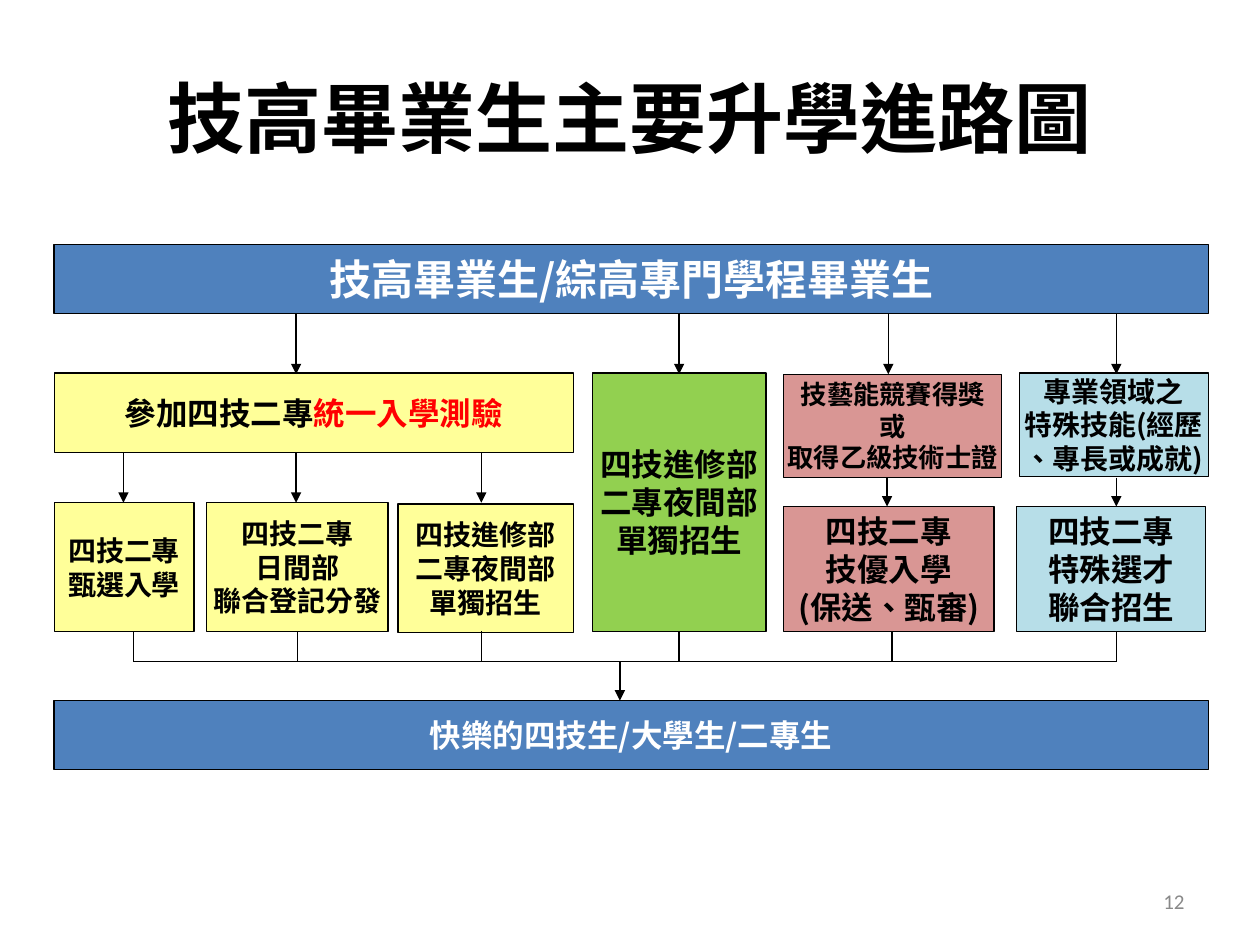
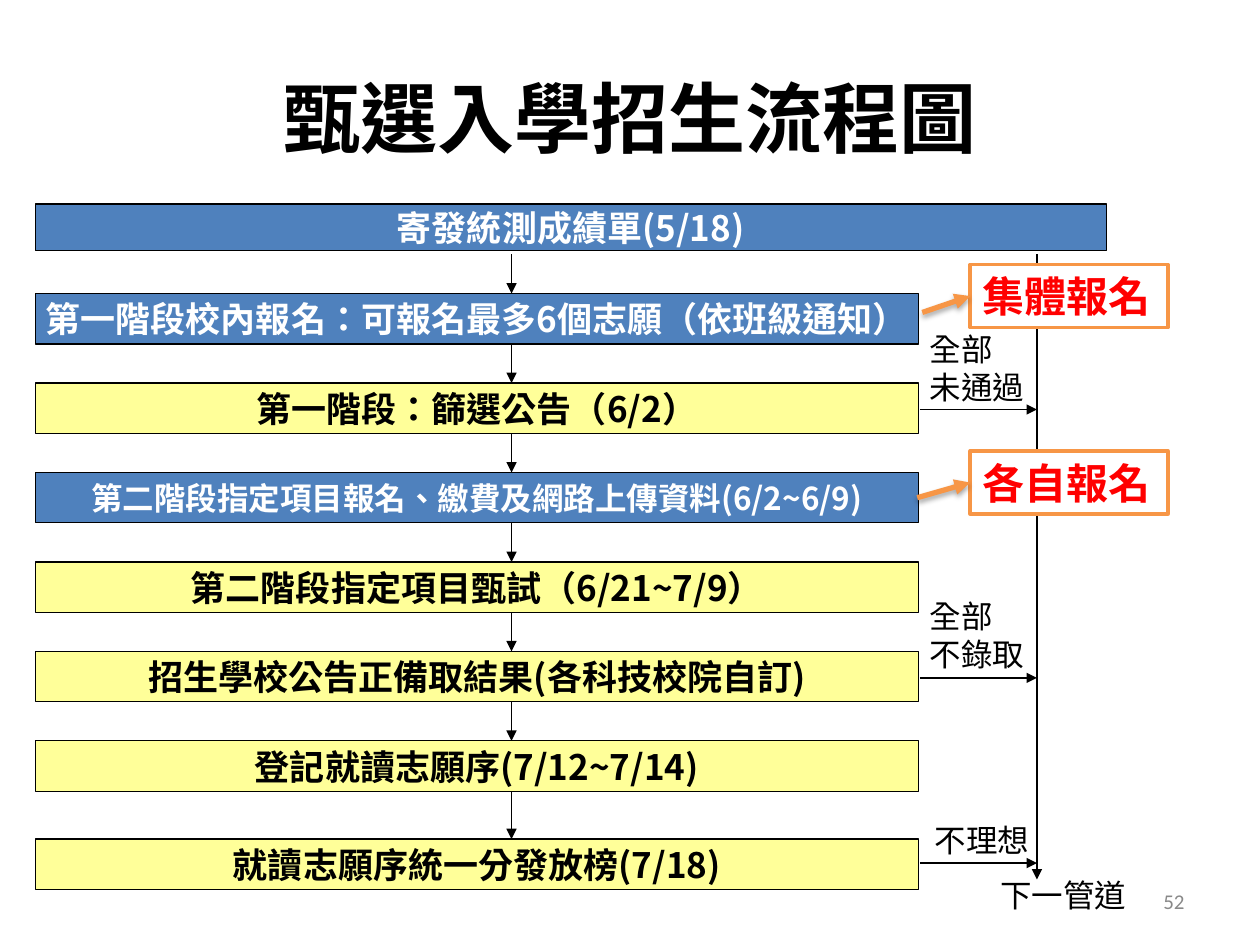
from dataclasses import dataclass, replace

import lxml.etree
import pptx
import pptx.dml.color
import pptx.enum.shapes
import pptx.enum.text
import pptx.oxml
import pptx.oxml.ns
import pptx.util

Inches = pptx.util.Inches
ALIGN = pptx.enum.text.PP_ALIGN
ANCHOR = pptx.enum.text.MSO_ANCHOR
qn = pptx.oxml.ns.qn


@dataclass(frozen=True)
class Theme:
    blue: str = "4F81BD"
    yellow: str = "FFFF99"
    green: str = "92D050"
    rose: str = "D99694"
    aqua: str = "B7DEE8"
    orange: str = "F79646"
    red: str = "FF0000"
    black: str = "000000"
    white: str = "FFFFFF"
    gray: str = "898989"
    cjk: str = "Noto Sans CJK SC"
    mono: str = "Noto Sans Mono"
    arial: str = "Arial"
    calibri: str = "Calibri"
    title: int = 44
    banner: int = 24
    step: int = 20
    body: int = 18
    small: int = 16
    tiny: int = 15
    number: int = 12
    hairline: float = 0.75
    frame: float = 2
    pointer: float = 3


THEME = Theme()


@dataclass(frozen=True)
class Box:
    left: float
    top: float
    width: float
    height: float

    def inner(self, left, top, width, height):
        return Box(self.left + left, self.top + top, width, height)

    def lengths(self):
        return [Inches(side) for side in (self.left, self.top, self.width, self.height)]


@dataclass(frozen=True)
class Style:
    size: int
    color: str = THEME.black
    font: str = THEME.cjk
    bold: bool = True
    align: ALIGN = ALIGN.CENTER
    anchor: ANCHOR = ANCHOR.MIDDLE
    wrap: bool = False
    outline: str = ""


TITLE = Style(THEME.title, wrap=True)
NUMBER = Style(THEME.number, THEME.gray, THEME.calibri, False, ALIGN.RIGHT, wrap=True)
LABEL = Style(THEME.body, THEME.black, THEME.mono, False, ALIGN.LEFT, ANCHOR.TOP, True)
CALLOUT = Style(THEME.banner, THEME.red, align=ALIGN.LEFT, anchor=ANCHOR.TOP,
                wrap=True, outline=THEME.white)


def rgb(color):
    return pptx.dml.color.RGBColor.from_string(color)


def add_solid(parent, color):
    fill = lxml.etree.SubElement(parent, qn("a:solidFill"))
    return lxml.etree.SubElement(fill, qn("a:srgbClr"), val=color)


def add_span(para, text, style, color):
    span = para.add_run()
    span.text = text
    span.font.size = pptx.util.Pt(style.size)
    span.font.bold = style.bold
    span.font.color.rgb = rgb(color)
    span.font.name = style.font
    properties = span._r.get_or_add_rPr()
    properties.set("lang", "zh-TW")
    lxml.etree.SubElement(properties, qn("a:ea"), typeface=style.font)
    if style.outline:
        outline = pptx.oxml.parse_xml(
            f'<a:ln {pptx.oxml.ns.nsdecls("a")} w="{pptx.util.Pt(THEME.hairline)}"/>')
        add_solid(outline, style.outline)
        properties.insert(0, outline)


def write(shape, text, style, accent=""):
    frame = shape.text_frame
    frame.word_wrap = style.wrap
    frame.vertical_anchor = style.anchor
    for index, line in enumerate(text.split("\n")):
        para = frame.add_paragraph() if index else frame.paragraphs[0]
        para.alignment = style.align
        add_span(para, line, style, style.color)
    if accent:
        add_span(para, accent, style, THEME.red)


def add_text(page, box, text, style):
    shape = page.shapes.add_textbox(*box.lengths())
    shape.text_frame.margin_right = Inches(0.1 if style.align != ALIGN.LEFT else 0)
    write(shape, text, style)


def add_block(page, box, text, fill, style, accent="", line=THEME.black, width=THEME.hairline):
    shape = page.shapes.add_shape(pptx.enum.shapes.MSO_SHAPE.RECTANGLE, *box.lengths())
    shape.shadow.inherit = False
    shape.fill.solid()
    shape.fill.fore_color.rgb = rgb(fill)
    shape.line.color.rgb = rgb(line)
    shape.line.width = pptx.util.Pt(width)
    write(shape, text, style, accent)


def add_line(page, area, start, end, arrow=True, color=THEME.black,
             width=THEME.hairline, shadow=False):
    points = [Inches(value) for x, y in (start, end) for value in (area.left + x, area.top + y)]
    line = page.shapes.add_connector(pptx.enum.shapes.MSO_CONNECTOR.STRAIGHT, *points)
    line.line.color.rgb = rgb(color)
    line.line.width = pptx.util.Pt(width)
    if arrow:
        lxml.etree.SubElement(line.line._get_or_add_ln(), qn("a:tailEnd"), type="triangle")
    effects = lxml.etree.SubElement(line._element.spPr, qn("a:effectLst"))
    if shadow:
        outer = lxml.etree.SubElement(
            effects, qn("a:outerShdw"), blurRad=str(pptx.util.Pt(3.1)),
            dist=str(pptx.util.Pt(1.8)), dir="5400000", rotWithShape="0")
        tint = lxml.etree.SubElement(outer, qn("a:srgbClr"), val=THEME.black)
        lxml.etree.SubElement(tint, qn("a:alpha"), val="35000")


def add_page(deck, title, number):
    page = deck.slides.add_slide(deck.slide_layouts[6])
    add_text(page, Box(0.5, 0.3, 9, 1.25), title, TITLE)
    add_text(page, Box(7.17, 6.95, 2.33, 0.4), number, NUMBER)
    return page


def draw_pathways(page, area):
    banner_height, branch_top, admission_top = 0.55, 1.02, 2.05
    admission_bottom, rail = 3.07, 3.31
    goal_top = area.height - banner_height
    for top, text, size in (
        (0, "技高畢業生/綜高專門學程畢業生", THEME.banner),
        (goal_top, "快樂的四技生/大學生/二專生", THEME.body),
    ):
        add_block(page, area.inner(0, top, area.width, banner_height), text,
                  THEME.blue, Style(size, THEME.white))

    evening = "四技進修部\n二專夜間部\n單獨招生"
    for place, text, fill, size, accent in (
        ((0, branch_top, 4.12, 0.63), "參加四技二專", THEME.yellow, THEME.body, "統一入學測驗"),
        ((4.27, branch_top, 1.38, 2.05), evening, THEME.green, THEME.body, ""),
        ((5.79, 1.03, 1.73, 0.82), "技藝能競賽得獎\n或\n取得乙級技術士證",
         THEME.rose, THEME.tiny, ""),
        ((7.66, branch_top, 1.5, 0.82), "專業領域之\n特殊技能(經歷\n、專長或成就)",
         THEME.aqua, THEME.small, ""),
        ((0, admission_top, 1.11, 1.02), "四技二專\n甄選入學", THEME.yellow, THEME.small, ""),
        ((1.21, admission_top, 1.44, 1.02), "四技二專\n日間部\n聯合登記分發",
         THEME.yellow, THEME.small, ""),
        ((2.73, 2.06, 1.39, 1.02), evening, THEME.yellow, THEME.small, ""),
        ((5.79, 2.08, 1.67, 0.99), "四技二專\n技優入學\n(保送、甄審)",
         THEME.rose, THEME.body, ""),
        ((7.64, 2.08, 1.5, 0.99), "四技二專\n特殊選才\n聯合招生", THEME.aqua, THEME.body, ""),
    ):
        add_block(page, area.inner(*place), text, fill, Style(size), accent)

    for x in (1.92, 4.96, 6.62, 8.43):
        add_line(page, area, (x, banner_height), (x, branch_top + 0.01))
    for x in (0.55, 1.92, 3.39):
        add_line(page, area, (x, 1.65), (x, admission_top))
    for x in (6.61, 8.43):
        add_line(page, area, (x, 1.85), (x, 2.08))
    stubs = (0.63, 1.93, 3.39, 4.96, 6.65, 8.43)
    for x in stubs:
        add_line(page, area, (x, admission_bottom), (x, rail), arrow=False)
    add_line(page, area, (stubs[0], rail), (stubs[-1], rail), arrow=False)
    add_line(page, area, (4.49, rail), (4.49, goal_top))


def draw_steps(page, area):
    width, height, pitch, center = 7.01, 0.4, 0.71, 3.78
    add_block(page, area.inner(0, 0, area.width, 0.37), "寄發統測成績單(5/18)",
              THEME.blue, Style(THEME.step, THEME.white))
    steps = (
        ("第一階段校內報名：可報名最多6個志願（依班級通知）", THEME.blue, THEME.step),
        ("第一階段：篩選公告（6/2）", THEME.yellow, THEME.step),
        ("第二階段指定項目報名、繳費及網路上傳資料(6/2~6/9)", THEME.blue, THEME.body),
        ("第二階段指定項目甄試（6/21~7/9）", THEME.yellow, THEME.step),
        ("招生學校公告正備取結果(各科技校院自訂)", THEME.yellow, THEME.step),
        ("登記就讀志願序(7/12~7/14)", THEME.yellow, THEME.step),
        ("就讀志願序統一分發放榜(7/18)", THEME.yellow, THEME.step),
    )
    tops = [pitch * (index + 1) for index in range(len(steps) - 1)] + [area.height - height]
    previous_bottom = 0.4
    for top, (text, fill, size) in zip(tops, steps):
        color = THEME.white if fill == THEME.blue else THEME.black
        add_block(page, area.inner(0, top, width, height), text, fill, Style(size, color))
        add_line(page, area, (center, previous_bottom), (center, top))
        previous_bottom = top + height


def draw_exits(page, area):
    trunk = 0.95
    add_line(page, area, (trunk, 0), (trunk, 4.96))
    for y, label_top, text in (
        (1.23, 0.55, "全部\n未通過"),
        (3.36, 2.67, "全部\n不錄取"),
        (4.83, 4.45, "不理想"),
    ):
        add_line(page, area, (0.02, y), (trunk, y))
        left = 0 if "\n" in text else 0.04
        add_text(page, area.inner(left, label_top, 1, 0.7 if "\n" in text else 0.4), text, LABEL)
    add_text(page, area.inner(0.56, 4.88, 1.34, 0.4), "下一管道",
             replace(LABEL, font=THEME.arial))


def draw_callout(page, area, text, start):
    group = page.shapes.add_group_shape()
    add_block(group, area, text, THEME.white, CALLOUT, line=THEME.orange, width=THEME.frame)
    add_line(group, area, start, (0, area.height / 2), color=THEME.orange,
             width=THEME.pointer, shadow=True)


def main():
    deck = pptx.Presentation()
    deck.slide_width, deck.slide_height = Inches(10), Inches(7.5)

    pathways = add_page(deck, "技高畢業生主要升學進路圖", "12")
    draw_pathways(pathways, Box(0.43, 1.94, 9.16, 4.17))

    selection = add_page(deck, "甄選入學招生流程圖", "52")
    draw_steps(selection, Box(0.28, 1.62, 8.5, 5.44))
    draw_exits(selection, Box(7.28, 2.02, 1.9, 5.28))
    draw_callout(selection, Box(7.7, 2.1, 1.57, 0.5), "集體報名", (-0.38, 0.38))
    draw_callout(selection, Box(7.7, 3.58, 1.57, 0.5), "各自報名", (-0.42, 0.37))

    deck.save("out.pptx")


if __name__ == "__main__":
    main()
